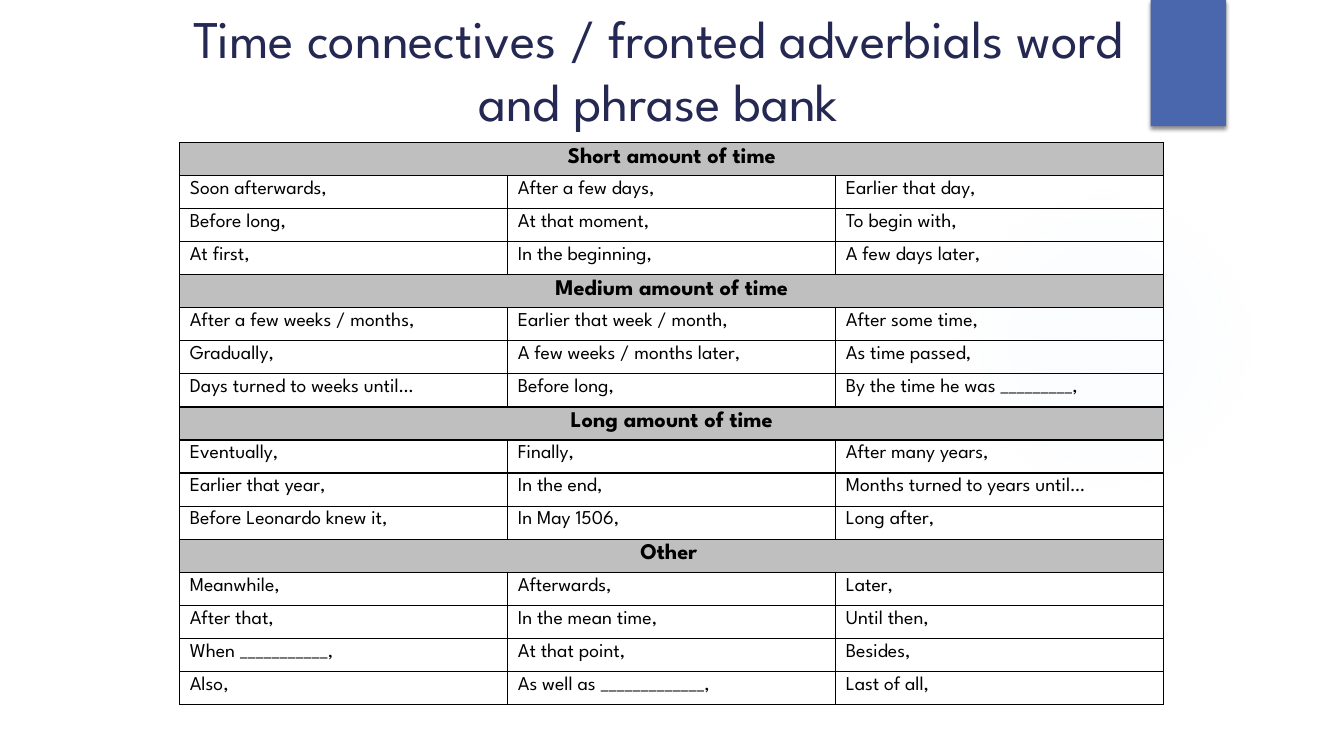
import pptx
import pptx.util
import pptx.dml.color
import pptx.enum.shapes
import pptx.enum.text
import pptx.oxml
from pptx.util import Cm, Pt

# Content
TITLE = "Time connectives / fronted adverbials word and phrase bank"
PHRASES = {
    "Short amount of time": [
        ("Soon afterwards,", "After a few days,", "Earlier that day,"),
        ("Before long,", "At that moment,", "To begin with,"),
        ("At first,", "In the beginning,", "A few days later,"),
    ],
    "Medium amount of time": [
        ("After a few weeks / months,", "Earlier that week / month,", "After some time,"),
        ("Gradually,", "A few weeks / months later,", "As time passed,"),
        ("Days turned to weeks until…", "Before long,", "By the time he was _________,"),
    ],
    "Long amount of time": [
        ("Eventually,", "Finally,", "After many years,"),
        ("Earlier that year,", "In the end,", "Months turned to years until…"),
        ("Before Leonardo knew it,", "In May 1506,", "Long after,"),
    ],
    "Other ": [
        ("Meanwhile,", "Afterwards,", "Later,"),
        ("After that,", "In the mean time,", "Until then,"),
        ("When ___________,", "At that point,", "Besides,"),
        ("Also,", "As well as _____________,", "Last of all,"),
    ],
}
FONT = "League Spartan"
COLUMNS = 3
TABLE_WIDTH, TABLE_HEIGHT = Cm(24.8), Cm(14.17)
NAMESPACE = 'xmlns:a="http://schemas.openxmlformats.org/drawingml/2006/main"'
CENTER = pptx.enum.text.PP_ALIGN.CENTER
LEFT = pptx.enum.text.PP_ALIGN.LEFT


def color(value):
    return pptx.dml.color.RGBColor.from_string(value)


def write(frame, text, size=14, bold=False, ink="000000", align=LEFT, spacing=None):
    para = frame.paragraphs[0]
    para.alignment = align
    if spacing:
        para.line_spacing = Pt(spacing)
    span = para.add_run()
    span.text = text
    span.font.name = FONT
    span.font.size = Pt(size)
    span.font.bold = bold
    span.font.color.rgb = color(ink)


def add_plain_shape(page, kind, left, top, width, height):
    shape = page.shapes.add_shape(kind, Cm(left), Cm(top), Cm(width), Cm(height))
    shape.shadow.inherit = False
    shape.line.fill.background()
    return shape


def add_glow(page):
    glow = add_plain_shape(page, pptx.enum.shapes.MSO_SHAPE.OVAL, 23.9, 4.65, 7.82, 7.82)
    stops = "".join(
        f'<a:gs pos="{place * 1000}"><a:srgbClr val="CDE0FB">'
        f'<a:alpha val="{alpha * 1000}"/></a:srgbClr></a:gs>'
        for place, alpha in ((0, 7), (36, 6), (69, 0)))
    gradient = pptx.oxml.parse_xml(
        f'<a:gradFill {NAMESPACE}><a:gsLst>{stops}</a:gsLst><a:path path="circle">'
        '<a:fillToRect l="50000" t="50000" r="50000" b="50000"/></a:path></a:gradFill>')
    glow.element.spPr.find("{*}prstGeom").addnext(gradient)


def add_tab(page):
    tab = add_plain_shape(page, pptx.enum.shapes.MSO_SHAPE.RECTANGLE, 29, 0, 1.9, 3.18)
    tab.fill.solid()
    tab.fill.fore_color.rgb = color("4A66AC")
    shadow = pptx.oxml.parse_xml(
        f'<a:outerShdw {NAMESPACE} blurRad="{Pt(3)}" dist="{Pt(2)}" dir="5400000" '
        'rotWithShape="0"><a:srgbClr val="000000"><a:alpha val="45000"/></a:srgbClr></a:outerShdw>')
    tab.element.spPr.find("{*}effectLst").append(shadow)


def add_title(page):
    box = page.shapes.add_textbox(Cm(3.89), Cm(0), Cm(25.4), Cm(3.18))
    frame = box.text_frame
    frame.word_wrap = True
    frame.margin_top = Cm(0.16)
    write(frame, TITLE, size=37.8, ink="242852", align=CENTER, spacing=44.9)


def style_cell(cell, fill=None):
    cell.margin_bottom = Cm(0)
    if fill:
        cell.fill.solid()
        cell.fill.fore_color.rgb = color(fill)
    else:
        cell.fill.background()
    # Borders come before the fill in the cell properties
    properties = cell._tc.get_or_add_tcPr()
    for place, side in enumerate(("lnL", "lnR", "lnT", "lnB")):
        properties.insert(place, pptx.oxml.parse_xml(
            f'<a:{side} {NAMESPACE} w="{Pt(1)}"><a:solidFill>'
            f'<a:srgbClr val="000000"/></a:solidFill></a:{side}>'))


def add_phrase_table(page):
    count = sum(1 + len(lines) for lines in PHRASES.values())
    table = page.shapes.add_table(count, COLUMNS, Cm(4.53), Cm(3.59),
                                  TABLE_WIDTH, TABLE_HEIGHT).table
    table.first_row = table.horz_banding = False
    for column in table.columns:
        column.width = TABLE_WIDTH // COLUMNS
    for row in table.rows:
        row.height = TABLE_HEIGHT // count

    position = 0
    for heading, lines in PHRASES.items():
        for index in range(COLUMNS):
            style_cell(table.cell(position, index), fill="BFBFBF")
        header = table.cell(position, 0)
        header.merge(table.cell(position, COLUMNS - 1))
        write(header.text_frame, heading, size=16, bold=True, align=CENTER)
        for offset, phrases in enumerate(lines, 1):
            for index, phrase in enumerate(phrases):
                cell = table.cell(position + offset, index)
                style_cell(cell)
                write(cell.text_frame, phrase)
        position += 1 + len(lines)


def main():
    deck = pptx.Presentation()
    deck.slide_width, deck.slide_height = Cm(33.87), Cm(19.05)
    page = deck.slides.add_slide(deck.slide_layouts[6])
    add_glow(page)
    add_tab(page)
    add_title(page)
    add_phrase_table(page)
    deck.save("out.pptx")


if __name__ == "__main__":
    main()
